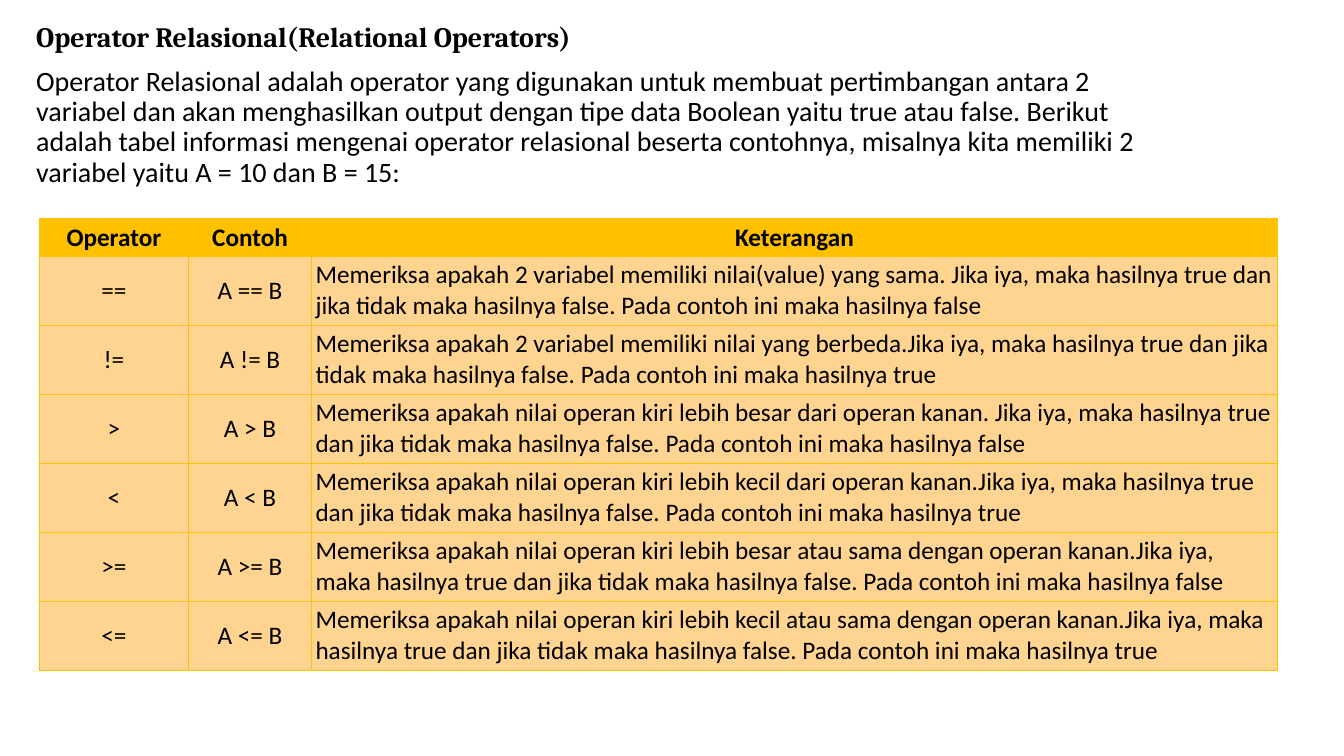
from dataclasses import dataclass

from lxml.etree import SubElement
from pptx import Presentation
from pptx.dml.color import RGBColor
from pptx.enum.text import MSO_ANCHOR, PP_ALIGN
from pptx.oxml.ns import qn
from pptx.util import Inches, Pt

BLACK = RGBColor(0x00, 0x00, 0x00)
GOLD = RGBColor(0xFF, 0xC0, 0x00)
PALE_GOLD = RGBColor(0xFF, 0xD4, 0x90)

TITLE = "Operator Relasional(Relational Operators)"
INTRO = (
    "Operator Relasional adalah operator yang digunakan untuk membuat pertimbangan "
    "antara 2 variabel dan akan menghasilkan output dengan tipe data Boolean yaitu "
    "true atau false. Berikut adalah tabel informasi mengenai operator relasional "
    "beserta contohnya, misalnya kita memiliki 2 variabel yaitu A = 10 dan B = 15:"
)
HEADERS = ("Operator", "Contoh", "Keterangan")
COL_WIDTHS = (1.48, 1.22, 9.58)
HEADER_HEIGHT, ROW_HEIGHT = 0.37, 0.685


@dataclass(frozen=True)
class Operator:
    symbol: str
    check: str
    result: str

    def cells(self) -> tuple[str, str, str]:
        """Texts of the operator's table row."""
        return (
            self.symbol,
            f"A {self.symbol} B",
            f"Memeriksa apakah {self.check}Jika iya, maka hasilnya true dan jika tidak "
            f"maka hasilnya false. Pada contoh ini maka hasilnya {self.result}",
        )


OPERATORS = (
    Operator("==", "2 variabel memiliki nilai(value) yang sama. ", "false"),
    Operator("!=", "2 variabel memiliki nilai yang berbeda.", "true"),
    Operator(">", "nilai operan kiri lebih besar dari operan kanan. ", "false"),
    Operator("<", "nilai operan kiri lebih kecil dari operan kanan.", "true"),
    Operator(">=", "nilai operan kiri lebih besar atau sama dengan operan kanan.", "false"),
    Operator("<=", "nilai operan kiri lebih kecil atau sama dengan operan kanan.", "true"),
)


def format_run(p, font: str, size: int, bold: bool) -> None:
    f = p.runs[0].font
    f.name, f.size, f.bold = font, Pt(size), bold
    f.color.rgb = BLACK


def add_borders(cell) -> None:
    """Draw thin gold lines on all sides; call before setting the cell's fill."""
    tc_pr = cell._tc.get_or_add_tcPr()
    for side in ("lnL", "lnR", "lnT", "lnB"):
        ln = SubElement(tc_pr, qn(f"a:{side}"), w=str(Pt(0.5)))
        fill = SubElement(ln, qn("a:solidFill"))
        SubElement(fill, qn("a:srgbClr"), val=str(GOLD))


def fill_cell(cell, text: str, header: bool, centered: bool) -> None:
    cell.margin_left = cell.margin_right = Inches(0.04)
    cell.margin_top = cell.margin_bottom = Inches(0.02)
    cell.vertical_anchor = MSO_ANCHOR.MIDDLE
    add_borders(cell)
    cell.fill.solid()
    cell.fill.fore_color.rgb = GOLD if header else PALE_GOLD
    cell.text_frame.text = text
    p = cell.text_frame.paragraphs[0]
    p.alignment = PP_ALIGN.CENTER if centered else PP_ALIGN.LEFT
    format_run(p, "Calibri", 18, header)


def add_intro(s) -> None:
    tf = s.shapes.add_textbox(Inches(0.26), Inches(0.18), Inches(11.42), Inches(1.9)).text_frame
    tf.word_wrap = True
    tf.text = f"{TITLE}\n{INTRO}"
    title, intro = tf.paragraphs
    title.line_spacing = intro.line_spacing = 0.9
    intro.space_before = Pt(10)
    format_run(title, "Cambria", 20, True)
    format_run(intro, "Calibri", 20, False)


def add_operator_table(s) -> None:
    rows = (HEADERS, *(op.cells() for op in OPERATORS))
    height = HEADER_HEIGHT + ROW_HEIGHT * len(OPERATORS)
    table = s.shapes.add_table(
        len(rows), len(HEADERS),
        Inches(0.39), Inches(2.17), Inches(sum(COL_WIDTHS)), Inches(height),
    ).table
    for column, width in zip(table.columns, COL_WIDTHS):
        column.width = Inches(width)
    for i, texts in enumerate(rows):
        header = i == 0
        table.rows[i].height = Inches(HEADER_HEIGHT if header else ROW_HEIGHT)
        for j, text in enumerate(texts):
            fill_cell(table.cell(i, j), text, header, header or j < 2)


def main() -> None:
    prs = Presentation()
    prs.slide_width, prs.slide_height = Inches(13.33), Inches(7.5)
    s = prs.slides.add_slide(prs.slide_layouts[6])
    add_intro(s)
    add_operator_table(s)
    prs.save("out.pptx")


if __name__ == "__main__":
    main()
